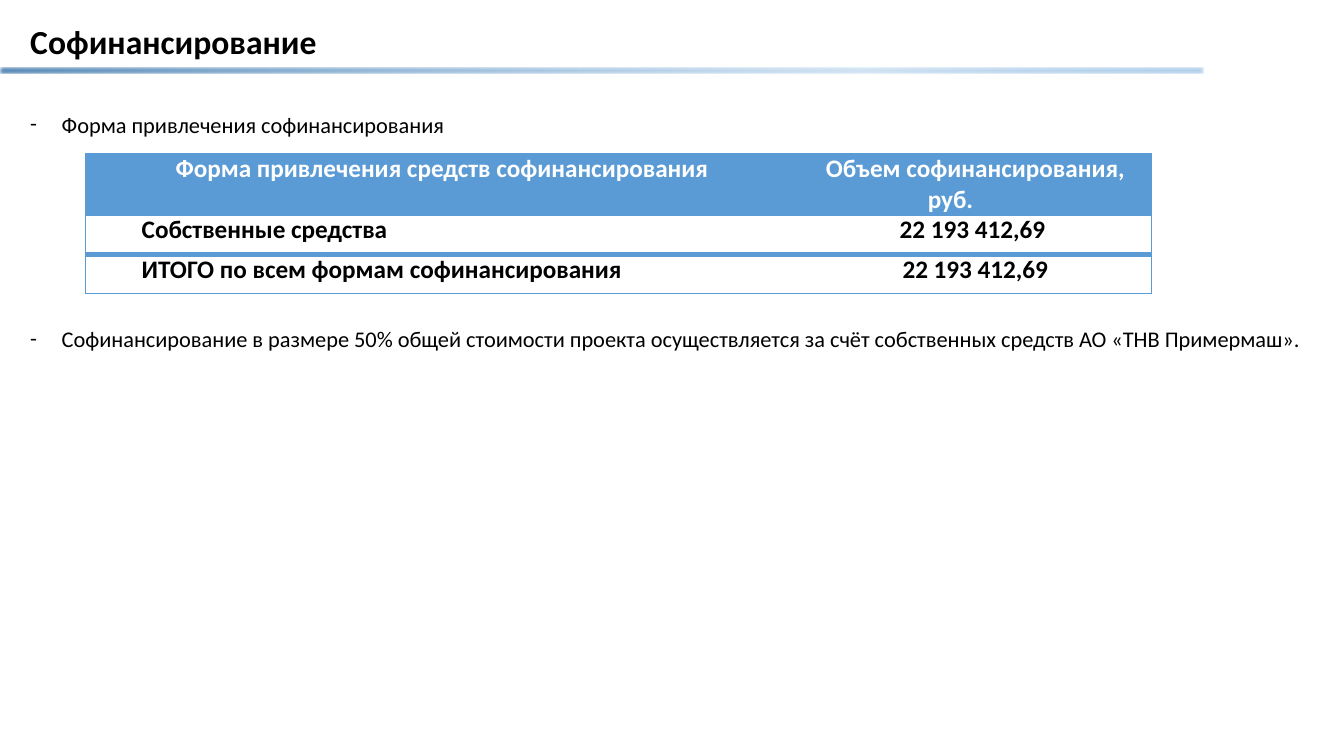
from lxml import etree
from pptx import Presentation
from pptx.dml.color import RGBColor
from pptx.enum.shapes import MSO_SHAPE
from pptx.enum.text import MSO_ANCHOR, MSO_AUTO_SIZE, PP_ALIGN
from pptx.oxml import parse_xml
from pptx.oxml.ns import nsdecls, qn
from pptx.util import Pt

ROUNDED = MSO_SHAPE.ROUNDED_RECTANGLE
MIDDLE, TOP = MSO_ANCHOR.MIDDLE, MSO_ANCHOR.TOP
LEFT, CENTER = PP_ALIGN.LEFT, PP_ALIGN.CENTER
NO_AUTOFIT = MSO_AUTO_SIZE.NONE

BLACK = RGBColor(0x00, 0x00, 0x00)
WHITE = RGBColor(0xFF, 0xFF, 0xFF)
BLUE = RGBColor(0x5B, 0x9B, 0xD5)
BAR_STOPS = [
    (0, RGBColor(0x2A, 0x69, 0xA2), 100),
    (72, RGBColor(0x66, 0xA2, 0xD8), 41),
    (100, RGBColor(0x9D, 0xC3, 0xE6), 100),
]

FONT = "Calibri"
NO_TABLE_STYLE = "{2D5ABB26-0587-4C30-8999-92F81FD0307C}"
BULLET_INDENT = 22.5
CELL_INDENT = 35.4
THIN, THICK = 0.5, 4

TITLE = "Софинансирование"
BULLETS = [
    "Форма привлечения софинансирования",
    "Софинансирование в размере 50% общей стоимости проекта осуществляется "
    "за счёт собственных средств АО «ТНВ Примермаш».",
]
FUNDING_ROWS = [
    ("Форма привлечения средств софинансирования", "Объем софинансирования, руб."),
    ("Собственные средства", "22 193 412,69 "),
    ("ИТОГО по всем формам софинансирования", "22\u00a0193\u00a0412,69"),
]
COLUMN_WIDTHS = [474.5, 287.3]
ROW_HEIGHTS = [44, 28, 28]


def place(shape, left, top, width, height):
    shape.left, shape.top = Pt(left), Pt(top)
    shape.width, shape.height = Pt(width), Pt(height)


def add_run(paragraph, text, size, color=BLACK, bold=False):
    run = paragraph.add_run()
    run.text = text
    run.font.name = FONT
    run.font.size = Pt(size)
    run.font.bold = bold
    run.font.color.rgb = color


def set_indent(paragraph, margin, first_line):
    properties = paragraph._p.get_or_add_pPr()
    properties.set("marL", str(Pt(margin)))
    properties.set("indent", str(Pt(first_line)))
    return properties


def fill_title(title):
    place(title, 14.4, 10.8, 825, 40.3)
    title.text_frame.vertical_anchor = MIDDLE
    title.text_frame.auto_size = NO_AUTOFIT
    paragraph = title.text_frame.paragraphs[0]
    paragraph.alignment = LEFT
    paragraph.line_spacing = 0.9
    add_run(paragraph, TITLE, 24, bold=True)


def fill_bullets(body):
    place(body, 14.4, 75.6, 922.3, 181.4)
    frame = body.text_frame
    frame.vertical_anchor = TOP
    frame.auto_size = NO_AUTOFIT
    for index, text in enumerate(BULLETS):
        paragraph = frame.add_paragraph() if index else frame.paragraphs[0]
        paragraph.space_before = Pt(134 * index)
        properties = set_indent(paragraph, BULLET_INDENT, -BULLET_INDENT)
        etree.SubElement(properties, qn("a:buFont")).set("typeface", FONT)
        etree.SubElement(properties, qn("a:buChar")).set("char", "-")
        add_run(paragraph, text, 16)


def add_gradient_bar(slide):
    bar = slide.shapes.add_shape(ROUNDED, 0, Pt(48.2), Pt(859.7), Pt(4.3))
    bar.shadow.inherit = False
    bar.line.fill.background()
    bar.fill.background()
    stops = "".join(
        f'<a:gs pos="{position * 1000}"><a:srgbClr val="{color}">'
        f'<a:alpha val="{alpha * 1000}"/></a:srgbClr></a:gs>'
        for position, color, alpha in BAR_STOPS
    )
    gradient = parse_xml(
        f'<a:gradFill {nsdecls("a")}><a:gsLst>{stops}</a:gsLst><a:lin ang="0"/></a:gradFill>'
    )
    properties = bar._element.spPr
    properties.replace(properties.find(qn("a:noFill")), gradient)
    effects = properties.find(qn("a:effectLst"))
    etree.SubElement(effects, qn("a:softEdge")).set("rad", str(Pt(1)))


def set_borders(cell, widths):
    properties = cell._tc.get_or_add_tcPr()
    for side in "LRTB":
        width = widths.get(side, 0)
        line = etree.SubElement(properties, qn(f"a:ln{side}"), w=str(Pt(width)))
        if width:
            fill = etree.SubElement(line, qn("a:solidFill"))
            etree.SubElement(fill, qn("a:srgbClr")).set("val", str(BLUE))
        else:
            etree.SubElement(line, qn("a:noFill"))


def fill_cell(cell, text, is_header, alignment, borders):
    cell.margin_left = cell.margin_right = Pt(5)
    cell.margin_top = cell.margin_bottom = 0
    set_borders(cell, borders)
    if is_header:
        cell.fill.solid()
        cell.fill.fore_color.rgb = BLUE
    else:
        cell.fill.background()
    paragraph = cell.text_frame.paragraphs[0]
    paragraph.alignment = alignment
    set_indent(paragraph, 0, CELL_INDENT)
    add_run(paragraph, text, 18, WHITE if is_header else BLACK, bold=True)


def add_funding_table(slide):
    frame = slide.shapes.add_table(
        len(FUNDING_ROWS), len(COLUMN_WIDTHS), Pt(60.8), Pt(109.5),
        Pt(sum(COLUMN_WIDTHS)), Pt(sum(ROW_HEIGHTS)),
    )
    table = frame.table
    table.horz_banding = False
    table._tbl.tblPr.find(qn("a:tableStyleId")).text = NO_TABLE_STYLE
    for column, width in zip(table.columns, COLUMN_WIDTHS):
        column.width = Pt(width)
    for row, height in zip(table.rows, ROW_HEIGHTS):
        row.height = Pt(height)
    last_row = len(FUNDING_ROWS) - 1
    for row_index, texts in enumerate(FUNDING_ROWS):
        for column_index, text in enumerate(texts):
            is_header = row_index == 0
            alignment = CENTER if is_header or column_index else LEFT
            borders = {"R" if column_index else "L": THIN}
            borders["T"] = THICK if row_index == last_row else THIN
            borders["B"] = THICK if row_index == last_row - 1 else THIN
            cell = table.cell(row_index, column_index)
            fill_cell(cell, text, is_header, alignment, borders)


def main():
    presentation = Presentation()
    presentation.slide_width = Pt(960)
    presentation.slide_height = Pt(540)
    slide = presentation.slides.add_slide(presentation.slide_layouts[1])
    fill_title(slide.shapes.title)
    fill_bullets(slide.placeholders[1])
    add_gradient_bar(slide)
    add_funding_table(slide)
    presentation.save("out.pptx")


main()
